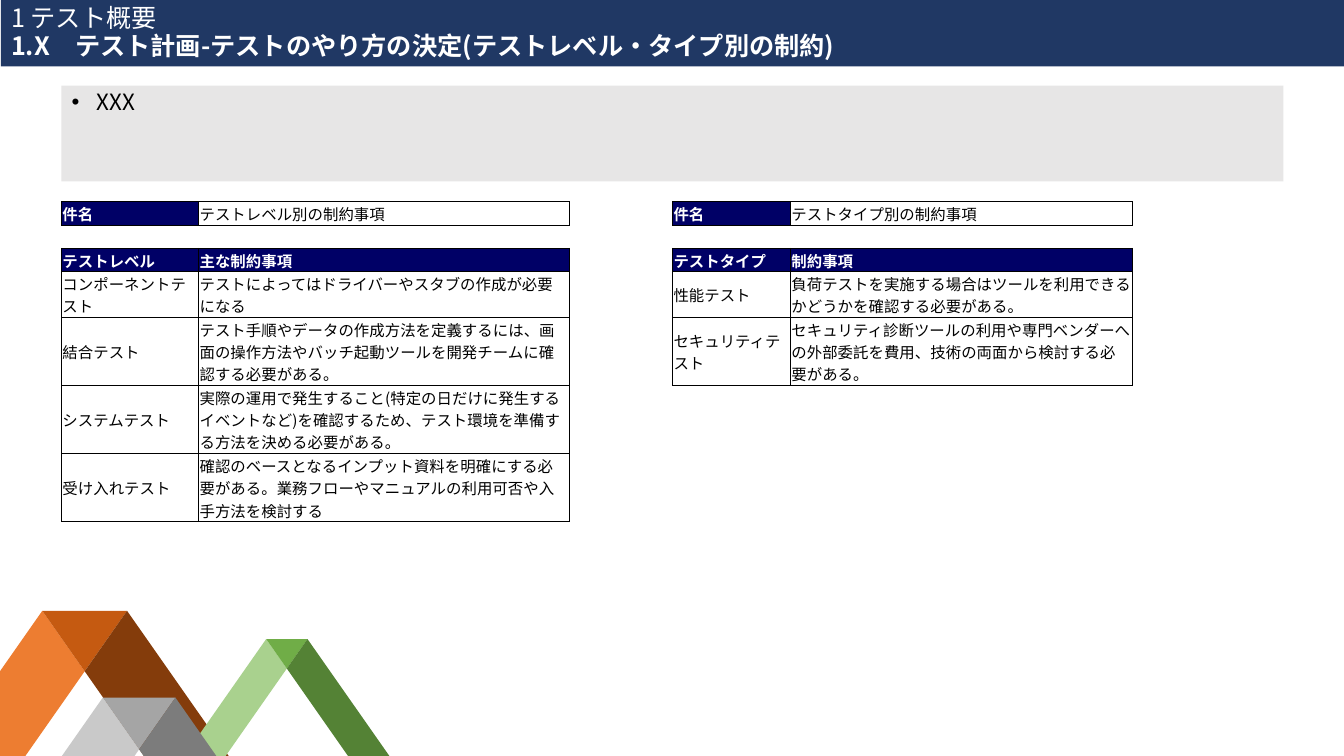
from lxml import etree
from pptx import Presentation
from pptx import util as u
from pptx.dml.color import RGBColor
from pptx.enum import text
from pptx.oxml import ns

FONT = "Noto Sans CJK JP"
SLOPE = 0.7
FLOOR = 7.5
COLORS = {
    "white": "FFFFFF", "black": "000000", "banner": "203864",
    "summary": "E7E6E6", "heading": "000066",
}
PEAKS = [
    (0.42, 1.26, 6.06, ("ED7D31", "C55A11", "843C0B")),
    (2.64, 3.05, 6.34, ("A9D18E", "70AD47", "548235")),
    (1.02, 1.74, 6.92, ("C9C9C9", "A5A5A5", "7C7C7C")),
]
LEVELS = [
    ("件名", "テストレベル別の制約事項"),
    ("", ""),
    ("テストレベル", "主な制約事項"),
    ("コンポーネントテスト", "テストによってはドライバーやスタブの作成が必要になる"),
    ("結合テスト", "テスト手順やデータの作成方法を定義するには、画面の操作方法や"
     "バッチ起動ツールを開発チームに確認する必要がある。"),
    ("システムテスト", "実際の運用で発生すること(特定の日だけに発生するイベントなど)を"
     "確認するため、テスト環境を準備する方法を決める必要がある。"),
    ("受け入れテスト", "確認のベースとなるインプット資料を明確にする必要がある。"
     "業務フローやマニュアルの利用可否や入手方法を検討する"),
]
TYPES = [
    ("件名", "テストタイプ別の制約事項"),
    ("", ""),
    ("テストタイプ", "制約事項"),
    ("性能テスト", "負荷テストを実施する場合はツールを利用できるかどうかを確認する必要がある。"),
    ("セキュリティテスト", "セキュリティ診断ツールの利用や専門ベンダーへの外部委託を費用、"
     "技術の両面から検討する必要がある。"),
]


def assign(target, values):
    for name, value in values.items():
        setattr(target, name, value)


class ConstraintSlide:
    def __init__(self, deck):
        self.slide = deck.slides.add_slide(deck.slide_layouts[1])

    def paint(self, item, color):
        item.fill.solid()
        item.fill.fore_color.rgb = RGBColor.from_string(color)

    def add_words(self, paragraph, words, size, color, bold=False):
        run = paragraph.add_run()
        run.text = words
        assign(run.font, {"size": u.Pt(size), "name": FONT, "bold": bold})
        run.font.color.rgb = RGBColor.from_string(COLORS[color])
        east_asian = etree.SubElement(run._r.get_or_add_rPr(), ns.qn("a:ea"))
        east_asian.set("typeface", FONT)

    def placeholder(self, index, box, color, anchor):
        holder = self.slide.placeholders[index]
        assign(holder, dict(zip(("left", "top", "width", "height"), map(u.Inches, box))))
        self.paint(holder, COLORS[color])
        assign(holder.text_frame, {
            "word_wrap": True, "vertical_anchor": anchor,
            "auto_size": text.MSO_AUTO_SIZE.NONE,
        })
        paragraph = holder.text_frame.paragraphs[0]
        assign(paragraph, {"line_spacing": 0.9, "alignment": text.PP_ALIGN.LEFT})
        return paragraph

    def title(self, chapter, section):
        heading = self.placeholder(0, (0.01, 0, 13.33, 0.66), "banner", text.MSO_ANCHOR.MIDDLE)
        self.add_words(heading, chapter, 18, "white")
        heading.add_line_break()
        self.add_words(heading, section, 18, "white", True)

    def summary(self, words):
        point = self.placeholder(1, (0.61, 0.85, 12.12, 0.95), "summary", text.MSO_ANCHOR.TOP)
        point.space_before = u.Pt(10)
        indent = u.Inches(0.25)
        properties = point._p.get_or_add_pPr()
        properties.set("marL", str(indent))
        properties.set("indent", str(-indent))
        self.add_words(point, words, 16, "black")

    def border(self, cell, sides):
        properties = cell._tc.get_or_add_tcPr()
        for side in "LRTB":
            line = etree.SubElement(properties, ns.qn(f"a:ln{side}"), w=str(u.Pt(0.5)))
            if side in sides:
                fill = etree.SubElement(line, ns.qn("a:solidFill"))
                etree.SubElement(fill, ns.qn("a:srgbClr"), val=COLORS["black"])
            else:
                etree.SubElement(line, ns.qn("a:noFill"))

    def cell(self, cell, words, heading):
        assign(cell, {
            "margin_left": u.Inches(0.01), "margin_top": u.Inches(0.01),
            "margin_right": u.Inches(0.01), "margin_bottom": 0,
            "vertical_anchor": text.MSO_ANCHOR.MIDDLE,
        })
        self.border(cell, "LRTB" if words else "TB")
        if heading:
            self.paint(cell, COLORS["heading"])
        else:
            cell.fill.background()
        paragraph = cell.text_frame.paragraphs[0]
        if words:
            self.add_words(paragraph, words, 11, "white" if heading else "black", heading)
        else:
            etree.SubElement(paragraph._p, ns.qn("a:endParaRPr"), sz="1100")

    def table(self, left, widths, heights, rows):
        frame = self.slide.shapes.add_table(
            len(rows), len(widths), u.Inches(left), u.Inches(2),
            u.Inches(sum(widths)), u.Inches(sum(heights)))
        table = frame.table
        assign(table, {"first_row": False, "horz_banding": False})
        for column, width in zip(table.columns, widths):
            column.width = u.Inches(width)
        for number, (row, height, words) in enumerate(zip(table.rows, heights, rows)):
            row.height = u.Inches(height)
            for column, content in enumerate(words):
                heading = number == 2 or (number == 0 and column == 0)
                self.cell(row.cells[column], content, heading)

    def polygon(self, points, color):
        start, *rest = [(u.Inches(x), u.Inches(y)) for x, y in points]
        builder = self.slide.shapes.build_freeform(*start, scale=1.0)
        builder.add_line_segments(rest, close=True)
        facet = builder.convert_to_shape()
        facet.shadow.inherit = False
        self.paint(facet, color)
        facet.line.fill.background()

    def peak(self, left, right, top, shades):
        middle = (left + right) / 2
        valley = top + (middle - left) / SLOPE
        outer = SLOPE * (FLOOR - top)
        inner = SLOPE * (FLOOR - valley)
        foot = [(left - outer, FLOOR)]
        if left < outer:
            foot = [(0, FLOOR), (0, top + left / SLOPE)]
        facets = (
            [(left, top), (middle, valley), (middle - inner, FLOOR), *foot],
            [(left, top), (right, top), (middle, valley)],
            [(right, top), (right + outer, FLOOR), (middle + inner, FLOOR), (middle, valley)],
        )
        for points, shade in zip(facets, shades):
            self.polygon(points, shade)


def main():
    deck = Presentation()
    assign(deck, {"slide_width": u.Inches(13.33), "slide_height": u.Inches(7.5)})
    page = ConstraintSlide(deck)
    for peak in PEAKS:
        page.peak(*peak)
    page.title("1 テスト概要", "1.X　テスト計画-テストのやり方の決定(テストレベル・タイプ別の制約)")
    page.summary("XXX")
    page.table(0.61, (1.36, 3.68), [0.23] * 3 + [0.45] + [0.67] * 3, LEVELS)
    page.table(6.67, (1.17, 3.39), [0.23] * 3 + [0.45, 0.67], TYPES)
    deck.save("out.pptx")


if __name__ == "__main__":
    main()
